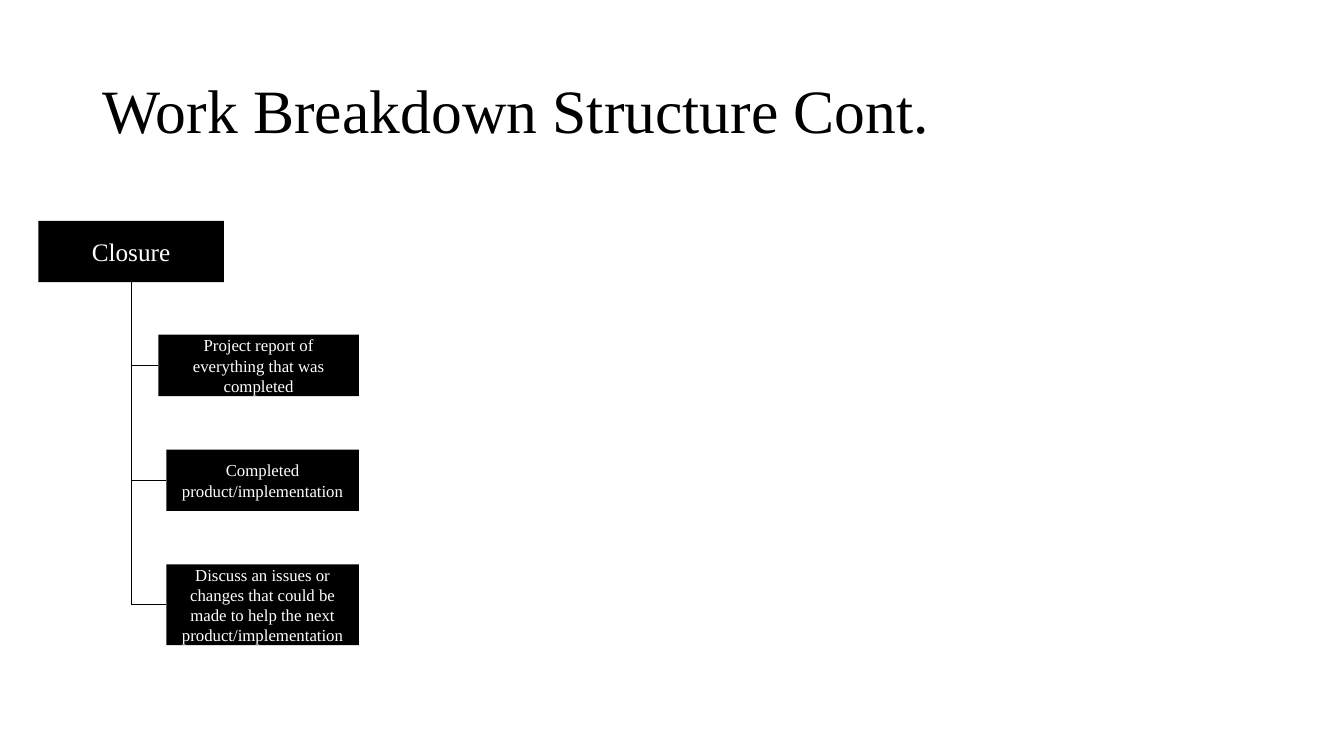
from lxml import etree
from pptx import Presentation
from pptx.dml.color import RGBColor
from pptx.enum.shapes import MSO_CONNECTOR as Connector, MSO_SHAPE as Shape
from pptx.enum.text import MSO_ANCHOR as Anchor, PP_ALIGN as Align
from pptx.oxml.ns import qn
from pptx.util import Inches, Pt

BLACK, WHITE = "000000", "FFFFFF"
BOTTOM, LEFT = 2, 1  # connection sites of a rectangle

prs = Presentation()
prs.slide_width, prs.slide_height = Inches(13.33), Inches(7.5)
slide = prs.slides.add_slide(prs.slide_layouts[6])


def write(shape, text, size, color, align):
    frame = shape.text_frame
    frame.word_wrap = True
    frame.vertical_anchor = Anchor.MIDDLE
    paragraph = frame.paragraphs[0]
    paragraph.text = text
    paragraph.alignment = align
    paragraph.font.name = "Times New Roman"
    paragraph.font.size = Pt(size)
    paragraph.font.color.rgb = RGBColor.from_string(color)
    return paragraph


def style(shape):
    """Give a box or connector its black, shadowless look."""
    shape.line.color.rgb = RGBColor.from_string(BLACK)
    shape.line.width = Pt(0.5)
    if hasattr(shape, "fill"):
        shape.fill.solid()
        shape.fill.fore_color.rgb = RGBColor.from_string(BLACK)
        shape.line.fill.background()
        shape.shadow.inherit = False
    else:
        etree.SubElement(shape._element.spPr, qn("a:effectLst"))


title = slide.shapes.add_textbox(Inches(0.92), Inches(0.4), Inches(11.5), Inches(1.45))
write(title, "Work Breakdown Structure Cont.", 44, BLACK, Align.LEFT).line_spacing = 0.9

# Phase at the top of the tree
phase = slide.shapes.add_shape(
    Shape.RECTANGLE, Inches(0.38), Inches(2.19), Inches(1.84), Inches(0.61))
style(phase)
write(phase, "Closure", 18, WHITE, Align.CENTER)

# Tasks share a right edge and an equal row pitch
TASK_TOP, TASK_PITCH, TASK_RIGHT = 3.32, 1.14, 3.56
TRUNK_X = phase.left + phase.width // 2
tasks = [
    ("Project report of everything that was completed", 1.99, 0.61),
    ("Completed product/implementation", 1.91, 0.61),
    ("Discuss an issues or changes that could be made to help the next "
     "product/implementation", 1.91, 0.8),
]
for row, (text, width, height) in enumerate(tasks):
    task = slide.shapes.add_shape(
        Shape.RECTANGLE, Inches(TASK_RIGHT - width), Inches(TASK_TOP + row * TASK_PITCH),
        Inches(width), Inches(height))
    style(task)
    write(task, text, 12, WHITE, Align.CENTER)
    branch_y = task.top + task.height // 2
    branch = slide.shapes.add_connector(
        Connector.STRAIGHT, TRUNK_X, branch_y, task.left, branch_y)
    branch.end_connect(task, LEFT)
    style(branch)

# Trunk runs from the phase down to the last branch
trunk = slide.shapes.add_connector(
    Connector.STRAIGHT, TRUNK_X, phase.top + phase.height, TRUNK_X, branch_y)
trunk.begin_connect(phase, BOTTOM)
style(trunk)

prs.save("out.pptx")
